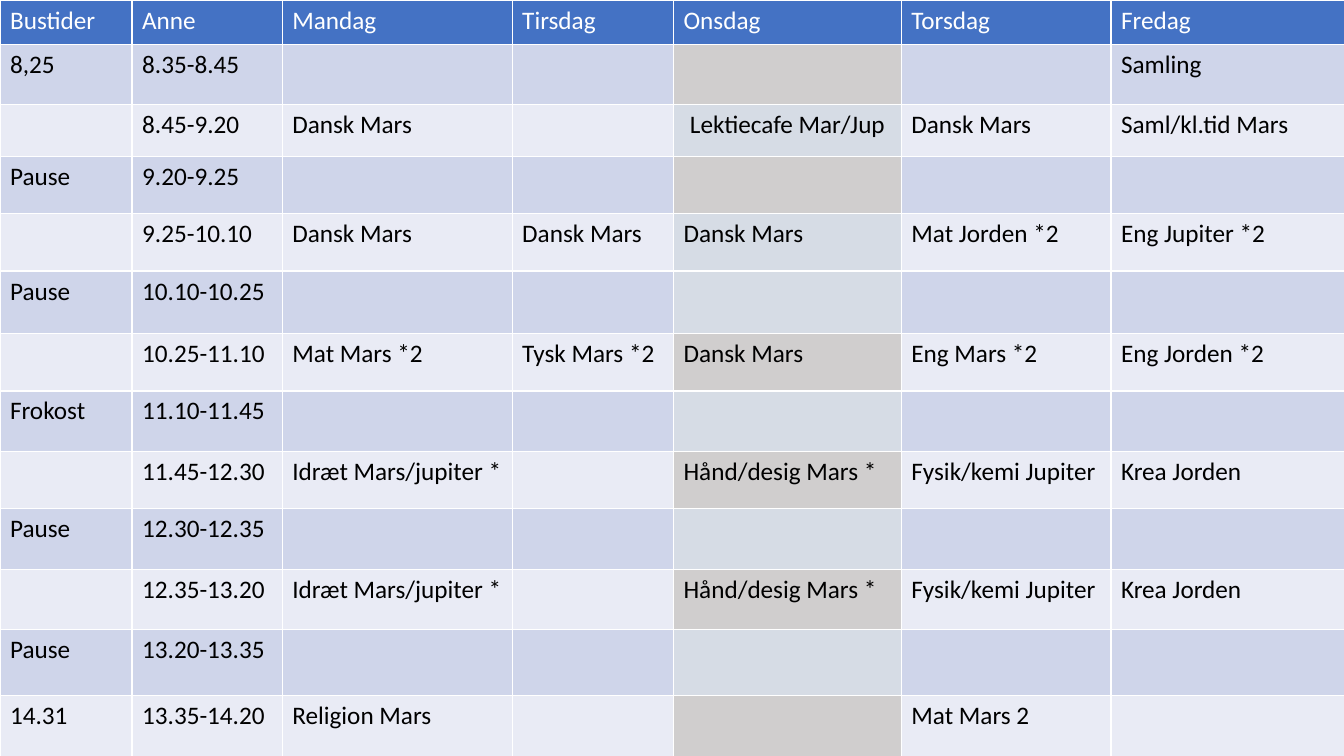
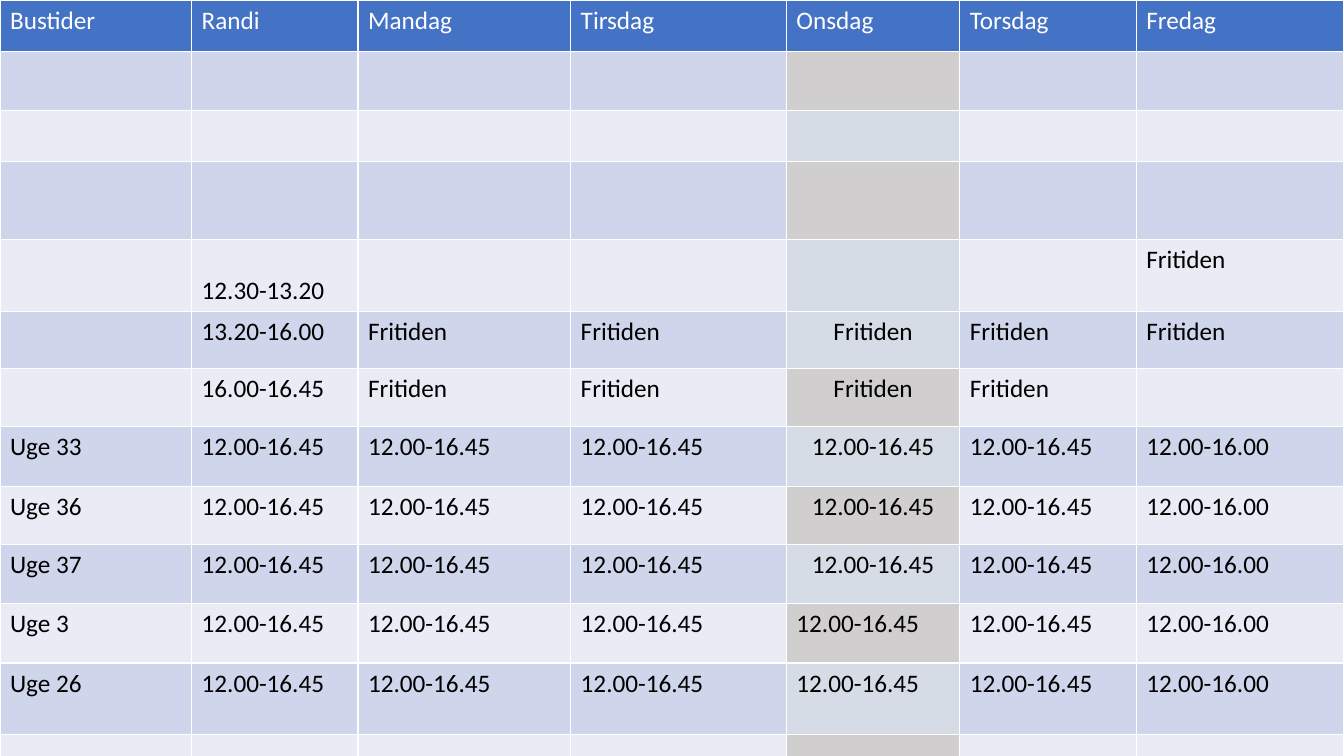
from dataclasses import dataclass

from pptx import Presentation
from pptx.dml.color import RGBColor
from pptx.enum.text import MSO_ANCHOR, PP_ALIGN
from pptx.util import Inches, Pt


@dataclass(frozen=True)
class Theme:
    font: str = "Calibri"
    size: int = 18
    header_fill: str = "4472C4"
    header_text: str = "FFFFFF"
    body_text: str = "000000"
    bands: tuple = ("E9EBF5", "CFD5EA")  # even rows, odd rows
    grey: str = "D0CECE"
    blue_grey: str = "D6DCE5"


THEME = Theme()
SLIDE_WIDTH, SLIDE_HEIGHT = 13.33, 7.5
DAYS = ["Mandag", "Tirsdag", "Onsdag", "Torsdag", "Fredag"]
ONSDAG = 2 + DAYS.index("Onsdag")

# Anne: bus time or break, lesson time, then Monday to Friday
ANNE_COLUMNS = [1.31, 1.49, 2.28, 1.6, 2.26, 2.08, 2.32]
ANNE_ROWS = [0.44, 0.6, 0.51, 0.57, 0.57, 0.62, 0.57, 0.6, 0.57, 0.6, 0.6, 0.65, 0.66]
AFTERNOON = ["Idræt Mars/jupiter *", "", "Hånd/desig Mars *", "Fysik/kemi Jupiter", "Krea Jorden"]
ANNE_LESSONS = [
    ["8,25", "8.35-8.45", "", "", "", "", "Samling"],
    ["", "8.45-9.20", "Dansk Mars", "", "Lektiecafe Mar/Jup", "Dansk Mars", "Saml/kl.tid Mars"],
    ["Pause", "9.20-9.25"],
    ["", "9.25-10.10", "Dansk Mars", "Dansk Mars", "Dansk Mars", "Mat Jorden *2", "Eng Jupiter *2"],
    ["Pause", "10.10-10.25"],
    ["", "10.25-11.10", "Mat Mars *2", "Tysk Mars *2", "Dansk Mars", "Eng Mars *2", "Eng Jorden *2"],
    ["Frokost", "11.10-11.45"],
    ["", "11.45-12.30", *AFTERNOON],
    ["Pause", "12.30-12.35"],
    ["", "12.35-13.20", *AFTERNOON],
    ["Pause", "13.20-13.35"],
    ["14.31", "13.35-14.20", "Religion Mars", "", "", "Mat Mars 2", ""],
]

# Randi: after-school hours, then the weeks with long days
RANDI_COLUMNS = [1.9, 1.65, 2.11, 2.14, 1.72, 1.75, 2.06]
RANDI_ROWS = [0.51, 0.59, 0.5, 0.78, 0.71, 0.57, 0.57, 0.6, 0.57, 0.59, 0.59, 0.71, 0.65]
LONG_DAYS = ["12.00-16.45"] * 5 + ["12.00-16.00"]
RANDI_HOURS = [
    [], [], [],
    ["", "12.30-13.20", "", "", "", "", "Fritiden"],
    ["", "13.20-16.00", *["Fritiden"] * 5],
    ["", "16.00-16.45", *["Fritiden"] * 4],
    *[[f"Uge {week}", *LONG_DAYS] for week in (33, 36, 37, 3, 26)],
    [],
]


def cell_fill(row, column):
    """Header, banded body, and a Wednesday column with its own two tones."""
    if row == 0:
        return THEME.header_fill
    if column == ONSDAG:
        is_grey = row % 2 == 1 if row < 5 else row % 2 == 0
        return THEME.grey if is_grey else THEME.blue_grey
    return THEME.bands[row % 2]


def write_cell(cell, text, row, column):
    cell.fill.solid()
    cell.fill.fore_color.rgb = RGBColor.from_string(cell_fill(row, column))
    paragraph = cell.text_frame.paragraphs[0]
    paragraph.font.size = Pt(THEME.size)
    if text:
        run = paragraph.add_run()
        run.text = text
        run.font.name = THEME.font
        run.font.size = Pt(THEME.size)
        run.font.bold = False
        color = THEME.body_text if row else THEME.header_text
        run.font.color.rgb = RGBColor.from_string(color)


def add_timetable(slide, left, top, teacher, columns, heights, entries):
    """Place a weekly timetable at left, top; return the table."""
    timetable = slide.shapes.add_table(
        len(heights), len(columns), Inches(left), Inches(top),
        Inches(sum(columns)), Inches(sum(heights))).table
    for column, width in zip(timetable.columns, columns):
        column.width = Inches(width)
    for row, height in zip(timetable.rows, heights):
        row.height = Inches(height)

    for r, texts in enumerate([["Bustider", teacher, *DAYS], *entries]):
        for c in range(len(columns)):
            write_cell(timetable.cell(r, c), texts[c] if c < len(texts) else "", r, c)
    return timetable


def center_onsdag(timetable, rows):
    for row in rows:
        timetable.cell(row, ONSDAG).text_frame.paragraphs[0].alignment = PP_ALIGN.CENTER


def main():
    deck = Presentation()
    deck.slide_width, deck.slide_height = Inches(SLIDE_WIDTH), Inches(SLIDE_HEIGHT)
    blank = deck.slide_layouts.get_by_name("Blank")

    # Anne's lessons
    lessons = add_timetable(deck.slides.add_slide(blank), 0, 0, "Anne",
                            ANNE_COLUMNS, ANNE_ROWS, ANNE_LESSONS)
    center_onsdag(lessons, [2])

    # Randi's hours
    hours = add_timetable(deck.slides.add_slide(blank), 0, 0, "Randi",
                          RANDI_COLUMNS, RANDI_ROWS, RANDI_HOURS)
    center_onsdag(hours, range(5, 10))
    hours.cell(4, 1).vertical_anchor = MSO_ANCHOR.BOTTOM

    deck.save("out.pptx")


if __name__ == "__main__":
    main()
